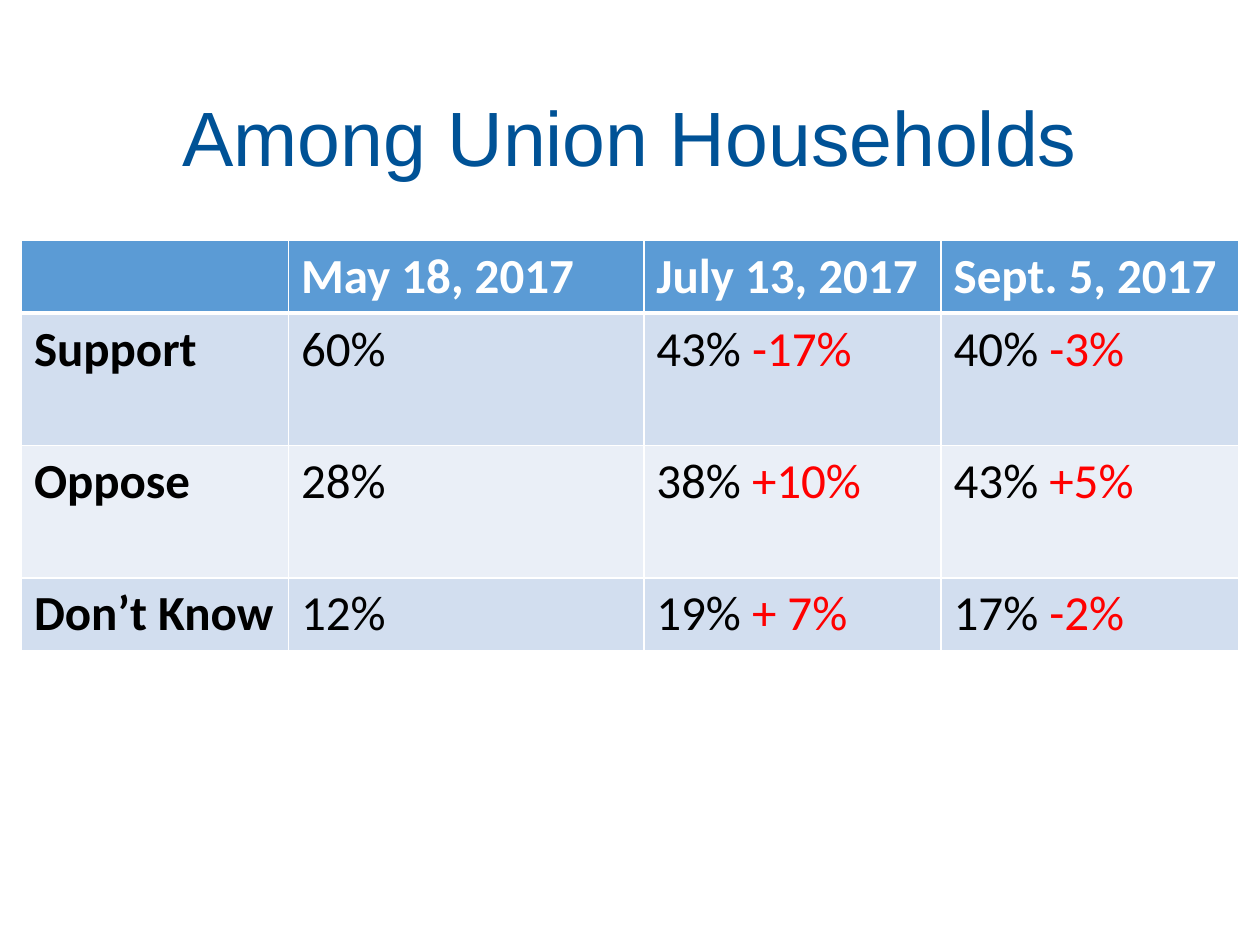
from lxml import etree
from pptx import Presentation
from pptx import util as u
from pptx.dml.color import RGBColor
from pptx.enum import text
from pptx.oxml import ns

COLORS = {
    "title": "005296",
    "header": "5B9BD5",
    "odd": "D2DEEF",
    "even": "EAEFF7",
    "white": "FFFFFF",
    "black": "000000",
    "change": "FF0000",
}
COLUMN_WIDTHS = [2.12, 2.82, 2.36, 2.36]
ROW_HEIGHTS = [0.57, 1.05, 1.05, 0.57]
HEADERS = [[""], ["May 18, 2017"], ["July 13, 2017"], ["Sept. 5, 2017"]]
RESULTS = [
    [["Support"], ["60%"], ["43% ", "-17%"], ["40% ", "-3%"]],
    [["Oppose"], ["28%"], ["38% ", "+10%"], ["43% ", "+5%"]],
    [["Don’t Know"], ["12%"], ["19% ", "+ 7%"], ["17% ", "-2%"]],
]


def add_run(p, words, size, color, font, bold=False):
    r = p.add_run()
    r.text = words
    r.font.size = u.Pt(size)
    r.font.name = font
    r.font.bold = bold
    r.font.color.rgb = RGBColor.from_string(COLORS[color])


def set_title(s, words):
    sp = s.shapes.title
    sp.left, sp.top = u.Inches(0.69), u.Inches(0.4)
    sp.width, sp.height = u.Inches(8.62), u.Inches(1.45)
    tf = sp.text_frame
    tf.vertical_anchor = text.MSO_ANCHOR.MIDDLE
    p = tf.paragraphs[0]
    p.alignment = text.PP_ALIGN.CENTER
    p.line_spacing = 0.9
    add_run(p, words, 44, "title", "Arial")


def set_borders(cell, widths):
    tc_pr = cell._tc.get_or_add_tcPr()
    for side, width in widths.items():
        line = etree.SubElement(tc_pr, ns.qn(f"a:ln{side}"), w=str(u.Pt(width)))
        fill = etree.SubElement(line, ns.qn("a:solidFill"))
        etree.SubElement(fill, ns.qn("a:srgbClr"), val=COLORS["white"])


def fill_cell(cell, parts, row, column):
    header = row == 0
    set_borders(cell, {"L": 1, "R": 1, "T": 3 if row == 1 else 1, "B": 3 if header else 1})
    band = "header" if header else "odd" if row % 2 else "even"
    cell.fill.solid()
    cell.fill.fore_color.rgb = RGBColor.from_string(COLORS[band])
    p = cell.text_frame.paragraphs[0]
    p.font.size = u.Pt(28)
    for words, color in zip(parts, ["white" if header else "black", "change"]):
        if words:
            add_run(p, words, 28, color, "Calibri", header or column == 0)


def add_results_table(s):
    rows = [HEADERS] + RESULTS
    frame = s.shapes.add_table(
        len(rows), len(COLUMN_WIDTHS), u.Inches(0.17), u.Inches(1.91),
        u.Inches(sum(COLUMN_WIDTHS)), u.Inches(sum(ROW_HEIGHTS)),
    )
    table = frame.table
    for column, width in zip(table.columns, COLUMN_WIDTHS):
        column.width = u.Inches(width)
    for row, height in zip(table.rows, ROW_HEIGHTS):
        row.height = u.Inches(height)
    for i, row in enumerate(rows):
        for j, parts in enumerate(row):
            fill_cell(table.cell(i, j), parts, i, j)


def main():
    prs = Presentation()
    prs.slide_width, prs.slide_height = u.Inches(10), u.Inches(7.5)
    s = prs.slides.add_slide(prs.slide_layouts[5])
    set_title(s, "Among Union Households")
    add_results_table(s)
    prs.save("out.pptx")


if __name__ == "__main__":
    main()
